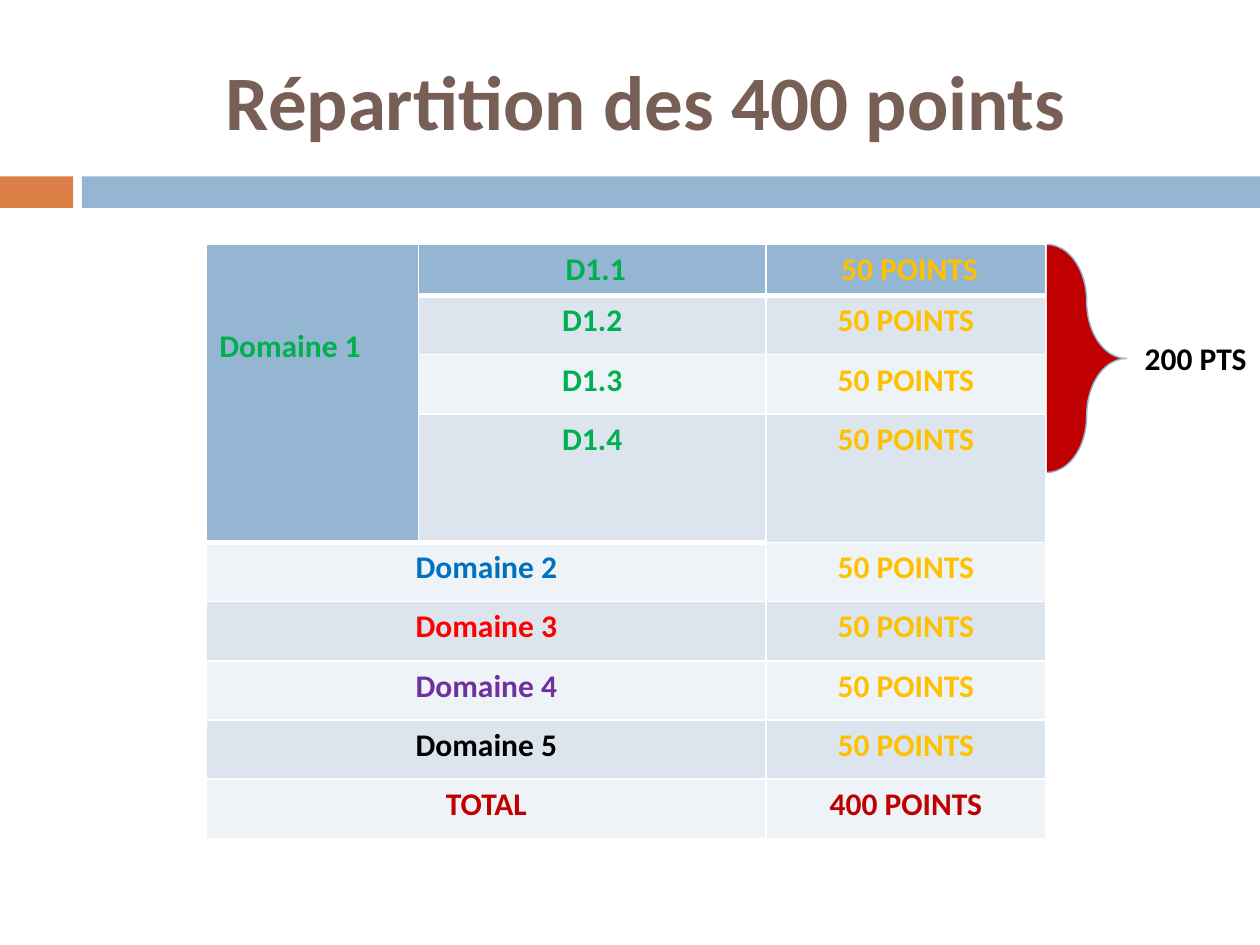
from lxml.etree import SubElement
from pptx import Presentation
from pptx.dml.color import RGBColor
from pptx.enum.shapes import MSO_SHAPE as Shape
from pptx.enum.text import MSO_ANCHOR as Anchor, PP_ALIGN as Align
from pptx.oxml.ns import qn
from pptx.util import Inches, Pt

COLORS = {
    "orange": "DD8047", "blue": "94B6D2", "brown": "775F55", "white": "FFFFFF",
    "band": "DCE5EE", "light": "EEF3F7", "green": "00B050", "gold": "FFC000",
    "azure": "0070C0", "red": "FF0000", "purple": "7030A0", "black": "000000",
    "crimson": "C00000",
}


def write(frame, text, size, color, align=Align.CENTER):
    para = frame.paragraphs[0]
    para.text = text
    para.alignment = align
    para.font.name = "Calibri"
    para.font.size = Pt(size)
    para.font.bold = True
    para.font.color.rgb = RGBColor.from_string(COLORS[color])


def style_cell(cell, fill, top=1, bottom=1):
    properties = cell._tc.get_or_add_tcPr()
    for side, width in (("L", 1), ("R", 1), ("T", top), ("B", bottom)):
        line = SubElement(properties, qn(f"a:ln{side}"), w=str(Pt(width)))
        solid = SubElement(line, qn("a:solidFill"))
        SubElement(solid, qn("a:srgbClr"), val=COLORS["white"])
    cell.fill.solid()
    cell.fill.fore_color.rgb = RGBColor.from_string(COLORS[fill])


deck = Presentation()
deck.slide_width, deck.slide_height = Inches(10), Inches(7.5)
page = deck.slides.add_slide(deck.slide_layouts[5])

for left, width, color in ((0, 0.58, "orange"), (0.65, 9.35, "blue")):
    bar = page.shapes.add_shape(Shape.RECTANGLE, Inches(left), Inches(1.4), Inches(width), Inches(0.25))
    bar.shadow.inherit = False
    bar.fill.solid()
    bar.fill.fore_color.rgb = RGBColor.from_string(COLORS[color])
    bar.line.fill.background()

title = page.shapes.title
title.left, title.top, title.width, title.height = Inches(0.67), Inches(0.25), Inches(8.92), Inches(1.08)
title.text_frame.vertical_anchor = Anchor.MIDDLE
write(title.text_frame, "Répartition des 400 points", 44, "brown")

rows = [
    (" D1.1", "green", " 50 POINTS", "gold"),
    ("D1.2", "green", "50 POINTS", "gold"),
    ("D1.3", "green", "50 POINTS", "gold"),
    ("D1.4", "green", "50 POINTS", "gold"),
    ("Domaine 2", "azure", "50 POINTS", "gold"),
    ("Domaine 3", "red", "50 POINTS", "gold"),
    ("Domaine 4", "purple", "50 POINTS", "gold"),
    ("Domaine 5", "black", "50 POINTS", "gold"),
    ("TOTAL", "crimson", "400 POINTS", "crimson"),
]
heights = [0.4, 0.47, 0.47, 1.02] + [0.47] * 5
widths = [1.68, 2.76, 2.22]
detail_rows = 4

table = page.shapes.add_table(len(rows), len(widths), Inches(1.64), Inches(1.94),
                              Inches(sum(widths)), Inches(sum(heights))).table
for column, width in zip(table.columns, widths):
    column.width = Inches(width)
for row, height in zip(table.rows, heights):
    row.height = Inches(height)

domain = table.cell(0, 0)
domain.merge(table.cell(detail_rows - 1, 0))
style_cell(domain, "blue", bottom=3)
domain.margin_top = Inches(0.66)
write(domain.text_frame, "Domaine 1", 18, "green", Align.LEFT)

for index, (label, label_color, points, points_color) in enumerate(rows):
    fill = "blue" if index == 0 else ("light", "band")[index % 2]
    label_cell = table.cell(index, 1 if index < detail_rows else 0)
    if index >= detail_rows:
        label_cell.merge(table.cell(index, 1))
    points_cell = table.cell(index, 2)
    bottom = 3 if index == 0 else 1
    top = 3 if index == 1 else 1
    style_cell(label_cell, fill, 3 if index == detail_rows else top, bottom)
    style_cell(points_cell, fill, top, bottom)
    write(label_cell.text_frame, label, 18, label_color)
    write(points_cell.text_frame, points, 18, points_color)

brace = page.shapes.add_shape(Shape.RIGHT_BRACE, Inches(8.31), Inches(1.94), Inches(0.63), Inches(1.81))
brace.shadow.inherit = False
brace.adjustments[0] = 0.72
brace.fill.solid()
brace.fill.fore_color.rgb = RGBColor.from_string(COLORS["crimson"])
brace.line.color.rgb = RGBColor.from_string(COLORS["blue"])
brace.line.width = Pt(0.79)

subtotal = page.shapes.add_textbox(Inches(8.94), Inches(2.64), Inches(1.1), Inches(0.4))
subtotal.text_frame.word_wrap = True
write(subtotal.text_frame, "200 PTS", 18, "black")

deck.save("out.pptx")
